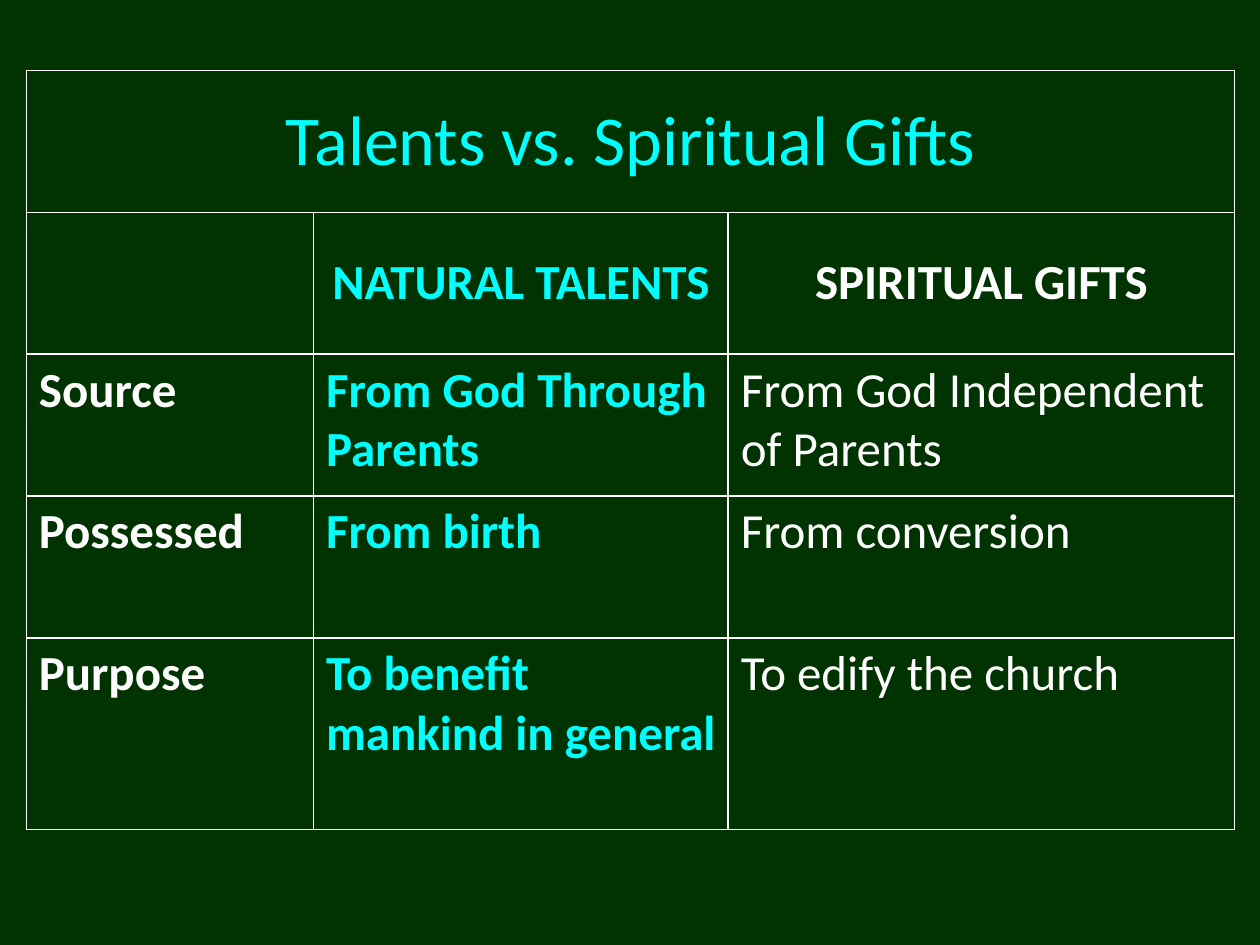
"""Build a slide with a table that compares talents and spiritual gifts."""
from lxml import etree
from pptx import Presentation
from pptx.dml.color import RGBColor
from pptx.enum.text import MSO_ANCHOR, PP_ALIGN
from pptx.oxml.ns import qn
from pptx.util import Cm, Pt

MIDDLE, TOP = MSO_ANCHOR.MIDDLE, MSO_ANCHOR.TOP
CENTER, LEFT = PP_ALIGN.CENTER, PP_ALIGN.LEFT
HUES = {"back": "003300", "cyan": "00FFFF", "white": "FFFFFF"}
FONT = "Calibri"

TITLE = "Talents vs. Spiritual Gifts"
HEADS = ["", "NATURAL TALENTS", "SPIRITUAL GIFTS"]
BODY = [
    ["Source", "From God Through Parents", "From God Independent of Parents"],
    ["Possessed", "From birth", "From conversion"],
    ["Purpose", "To benefit mankind in general", "To edify the church"],
]
TINTS = ["white", "cyan", "white"]
BOLDS = [True, True, False]
WIDTHS = [5.79, 8.36, 10.21]
HEIGHTS = [2.86] * 4 + [3.86]
X, Y = 0.53, 1.42


def write(cell, text, size=28, hue="white", bold=False, align=LEFT, anchor=TOP):
    cell.vertical_anchor = anchor
    para = cell.text_frame.paragraphs[0]
    para.alignment = align
    if text:
        run = para.add_run()
        run.text = text
        font = run.font
        font.name, font.size, font.bold = FONT, Pt(size), bold
        font.color.rgb = RGBColor.from_string(HUES[hue])


def frame(cell):
    props = cell._tc.get_or_add_tcPr()
    for side in ("lnL", "lnR", "lnT", "lnB"):
        line = etree.SubElement(props, qn("a:" + side), w=str(Pt(1)))
        fill = etree.SubElement(line, qn("a:solidFill"))
        etree.SubElement(fill, qn("a:srgbClr"), val=HUES["white"])
    cell.fill.background()


def main():
    deck = Presentation()
    deck.slide_width, deck.slide_height = Cm(25.4), Cm(19.05)
    slide = deck.slides.add_slide(deck.slide_layouts[6])
    back = slide.background.fill
    back.solid()
    back.fore_color.rgb = RGBColor.from_string(HUES["back"])

    table = slide.shapes.add_table(
        len(HEIGHTS), len(WIDTHS), Cm(X), Cm(Y), Cm(sum(WIDTHS)), Cm(sum(HEIGHTS))
    ).table
    table.first_row = table.horz_banding = False
    for col, width in zip(table.columns, WIDTHS):
        col.width = Cm(width)
    for row, height in zip(table.rows, HEIGHTS):
        row.height = Cm(height)
    for cell in table.iter_cells():
        frame(cell)

    table.cell(0, 0).merge(table.cell(0, len(WIDTHS) - 1))
    mid = {"align": CENTER, "anchor": MIDDLE}
    write(table.cell(0, 0), TITLE, size=40, hue="cyan", **mid)
    for c, (head, hue) in enumerate(zip(HEADS, TINTS)):
        write(table.cell(1, c), head, hue=hue, bold=True, **mid)
    for r, texts in enumerate(BODY, 2):
        for c, (text, hue, bold) in enumerate(zip(texts, TINTS, BOLDS)):
            write(table.cell(r, c), text, hue=hue, bold=bold)
    deck.save("out.pptx")


if __name__ == "__main__":
    main()
